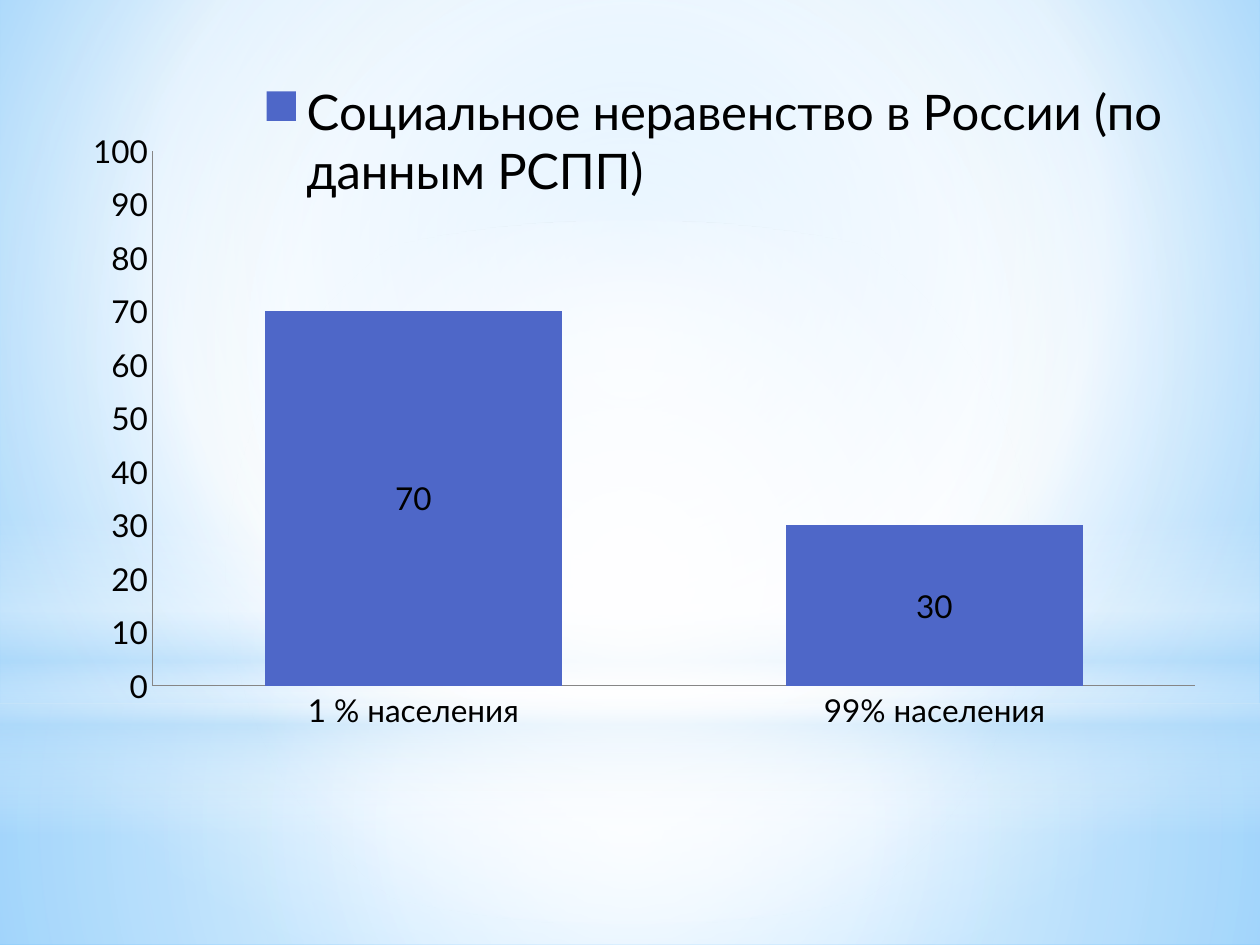
import pptx
import pptx.chart.data
import pptx.dml.color
import pptx.enum.chart
import pptx.enum.shapes
import pptx.oxml
import pptx.util
from pptx.oxml.ns import nsdecls

Pt = pptx.util.Pt
Kind = pptx.enum.shapes.MSO_SHAPE
Enum = pptx.enum.chart

FONT = "Lato"
CATS = ["1 % населения", "99% населения"]
NAME = "Социальное неравенство в России (по данным РСПП)"
VALS = [70, 30]
AREA = (36.7, 25.9, 657.4, 436.3)
PLOT = {"x": 0.077, "y": 0.138, "w": 0.906, "h": 0.701}
KEY = {"x": 0.155, "y": 0.04, "w": 0.82, "h": 0.17}

# Stops are (position %, colour, opacity %); a glow's focus is left, top, right, bottom %.
MID = (50, 50, 50, 50)
BACK = {"stops": [(0, "9ED5FF", 100), (60, "FFFFFF", 100), (100, "5BB9FF", 100)],
        "focus": (20, 10, 20, 60)}
GLOWS = [
    (Kind.RECTANGLE, (0, 401.8, 720, 138.2),
     {"stops": [(0, "FFFFFF", 91), (37, "FFFFFF", 76), (100, "B4DCFA", 79)], "focus": MID}),
    (Kind.RECTANGLE, (0, 0, 720, 401.8),
     {"stops": [(0, "FFFFFF", 89), (48, "FFFFFF", 62), (100, "B4DCFA", 79)], "focus": MID}),
    (Kind.RECTANGLE, (0, 296.6, 720, 180),
     {"stops": [(0, "FFFFFF", 0), (29, "FFFFFF", 30), (45, "B4DCFA", 40),
                (55, "FFFFFF", 26), (65, "B4DCFA", 60), (100, "FFFFFF", 0)], "angle": 90}),
    (Kind.OVAL, (0, 126, 720, 401.8),
     {"stops": [(0, "FFFFFF", 100), (56, "FFFFFF", 0)], "focus": MID}),
]


def tint(text):
    return pptx.dml.color.RGBColor.from_string(text)


def points(box):
    return [Pt(n) for n in box]


def blend(fill, root, stops, focus=None, angle=0):
    """Fill solid first, then swap that fill in root for a gradient."""
    fill.solid()
    old = root.xpath(".//a:solidFill")[0]
    marks = "".join(
        f'<a:gs pos="{pos * 1000}"><a:srgbClr val="{col}">'
        f'<a:alpha val="{alpha * 1000}"/></a:srgbClr></a:gs>'
        for pos, col, alpha in stops)
    if focus:
        sides = " ".join(f'{side}="{n * 1000}"' for side, n in zip("ltrb", focus))
        course = f'<a:path path="circle"><a:fillToRect {sides}/></a:path>'
    else:
        course = f'<a:lin ang="{angle * 60000}" scaled="0"/>'
    new = pptx.oxml.parse_xml(
        f'<a:gradFill {nsdecls("a")} rotWithShape="1">'
        f'<a:gsLst>{marks}</a:gsLst>{course}</a:gradFill>')
    old.getparent().replace(old, new)


def place(part, spots, inner=False):
    """Set a manual layout, as fractions of the chart."""
    for old in part.xpath("./c:layout"):
        part.remove(old)
    rows = '<c:layoutTarget val="inner"/>' if inner else ""
    rows += '<c:xMode val="edge"/><c:yMode val="edge"/>'
    rows += "".join(f'<c:{key} val="{n}"/>' for key, n in spots.items())
    new = pptx.oxml.parse_xml(
        f'<c:layout {nsdecls("c")}><c:manualLayout>{rows}</c:manualLayout></c:layout>')
    part.insert(0 if inner else 1, new)


def style(item, looks):
    for key, val in looks.items():
        setattr(item, key, val)


deck = pptx.Presentation()
style(deck, {"slide_width": Pt(720), "slide_height": Pt(540)})
slide = deck.slides.add_slide(deck.slide_layouts[6])
blend(slide.background.fill, slide.element, **BACK)

for kind, box, look in GLOWS:
    glow = slide.shapes.add_shape(kind, *points(box))
    glow.shadow.inherit = False
    glow.line.fill.background()
    blend(glow.fill, glow.element.spPr, **look)

data = pptx.chart.data.CategoryChartData()
data.categories = CATS
data.add_series(NAME, VALS)
chart = slide.shapes.add_chart(
    Enum.XL_CHART_TYPE.COLUMN_STACKED, *points(AREA), data).chart
style(chart, {"has_title": False, "has_legend": True})
text = {"name": FONT, "size": Pt(18)}
style(chart.font, text)
chart.font.color.rgb = tint("000000")

key = chart.legend
style(key, {"position": Enum.XL_LEGEND_POSITION.BOTTOM, "include_in_layout": False})
style(key.font, {"name": FONT, "size": Pt(28)})
key.font.color.rgb = tint("000000")
place(key._element, KEY)
place(chart.element.xpath(".//c:plotArea")[0], PLOT, inner=True)

style(chart.value_axis, {"minimum_scale": 0, "maximum_scale": 100, "major_unit": 10})
for axis in (chart.category_axis, chart.value_axis):
    style(axis, {"has_major_gridlines": False,
                 "major_tick_mark": Enum.XL_TICK_MARK.NONE,
                 "minor_tick_mark": Enum.XL_TICK_MARK.NONE})
    axis.format.line.color.rgb = tint("868686")
    axis.format.line.width = Pt(0.75)

plot = chart.plots[0]
style(plot, {"gap_width": 75, "overlap": 100, "vary_by_categories": False})
bars = plot.series[0]
bars.format.fill.solid()
bars.format.fill.fore_color.rgb = tint("4E67C8")
labels = bars.data_labels
style(labels, {"show_value": True, "position": Enum.XL_LABEL_POSITION.CENTER})
style(labels.font, text)
labels.font.color.rgb = tint("000000")

deck.save("out.pptx")
